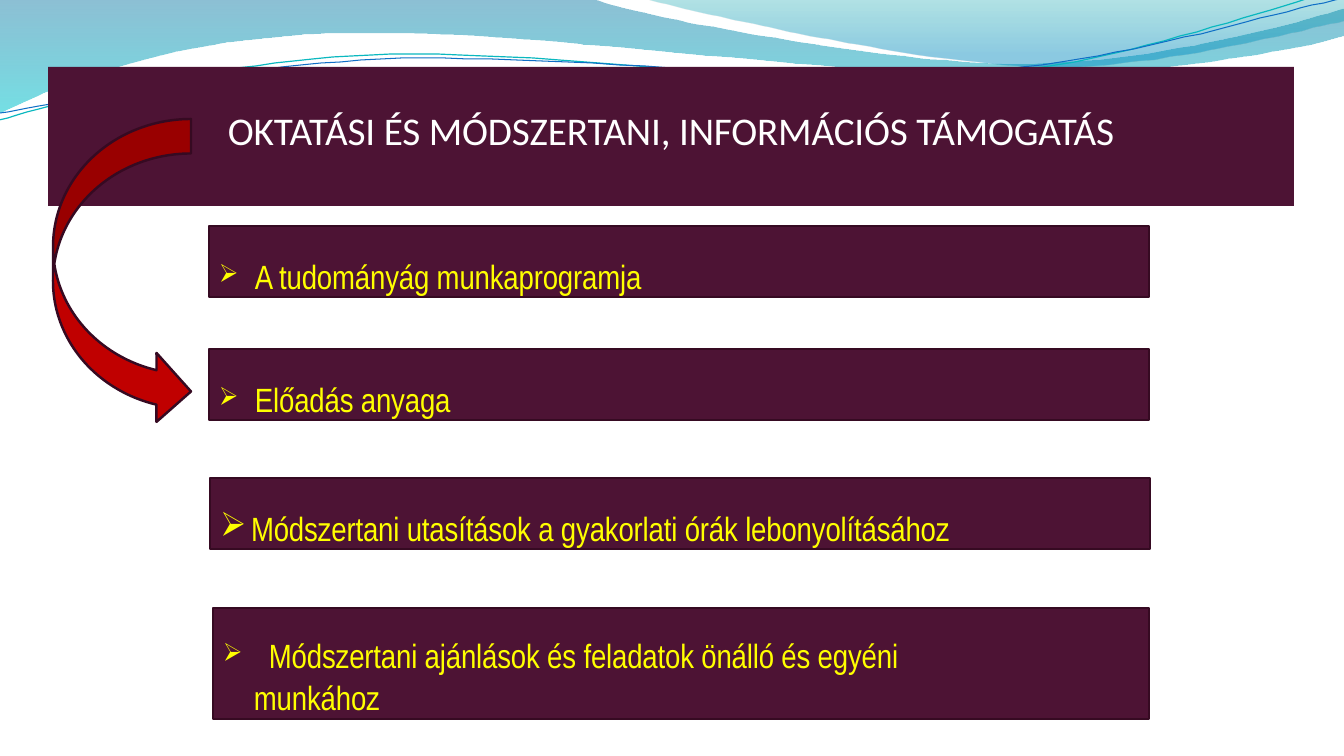
from dataclasses import dataclass

from lxml.etree import SubElement
from pptx import Presentation
from pptx.dml.color import RGBColor
from pptx.enum.shapes import MSO_SHAPE
from pptx.enum.text import MSO_ANCHOR, PP_ALIGN
from pptx.oxml.ns import qn
from pptx.util import Emu, Pt

TITLE = "OKTATÁSI ÉS MÓDSZERTANI, INFORMÁCIÓS TÁMOGATÁS"
TITLE_BOX = (48, 104, 1246, 49)
BANNER_BOX = (48, 67, 1246, 139)
ARROW_BOX = (53, 119, 138, 307)

TOPICS = [
    dict(text="A tudományág munkaprogramja", box=(209, 226, 940, 71),
         inset=30, before=21.4, margin=46, hang=36, bullet=75),
    dict(text="Előadás anyaga", box=(209, 349, 940, 71),
         inset=30, before=21.4, margin=46, hang=36, bullet=75),
    dict(text="Módszertani utasítások a gyakorlati órák lebonyolításához",
         box=(210, 478, 940, 71),
         inset=30, before=21.4, margin=41, hang=31, bullet=100),
    dict(text="\tMódszertani ajánlások és feladatok önálló és egyéni munkához",
         box=(213, 608, 936, 111), inset=26, before=19.1, margin=41, hang=31,
         bullet=75, tab=56, right=131, spacing=1.03),
]

# Each outline is a start point, then lines (x, y) and Bézier curves (six numbers).
# Gradient stops are (position, colour, opacity in percent).
WAVES = [
    dict(stops=[(0, "0074A1", 45), (1, "00C6CF", 55)], outline=[
        (-1, -1), (592, -1), (639, 17, 892, 64, 1019, 64),
        (1147, 64, 1288, 26, 1344, 9), (1346, 36),
        (1323, 44, 1169, 77, 1002, 76), (836, 76, 513, 28, 346, 34),
        (172, 36, 61, 84, -1, 114)]),
    dict(stops=[(0, "00A1A9", 30), (0.8, "008BBF", 45)], outline=[
        (644, -1), (684, 11, 916, 62, 1033, 66),
        (1149, 70, 1292, 32, 1344, 21), (1344, 0)]),
]
STRANDS = [
    dict(color="0AB8BF", width=0.85, outline=[
        (-1, 120), (65, 102, 213, 62, 372, 55),
        (531, 48, 796, 88, 958, 77), (1119, 67, 1262, 8, 1342, -10)]),
    dict(color="0F6FC6", width=0.75, outline=[
        (0, 113), (63, 104, 220, 67, 381, 59),
        (540, 53, 802, 83, 963, 73), (1124, 62, 1265, 14, 1345, -2)]),
]


@dataclass(frozen=True)
class Theme:
    plum: str = "4D1334"
    edge: str = "360A22"
    red: str = "C00000"
    white: str = "FFFFFF"
    yellow: str = "FFFF00"
    title_font: str = "Calibri"
    topic_font: str = "Arial Narrow"
    title_size: int = 28
    topic_size: int = 24
    edge_width: float = 1.75
    tracking: int = -10


THEME = Theme()
EMU_PER_PX = 914400 / 100.8
CURVE_STEPS = 24


def px(length):
    return Emu(round(length * EMU_PER_PX))


def rgb(color):
    return RGBColor.from_string(color)


def trace(outline):
    """Turn lines and Bézier curves into a list of points."""
    points = [outline[0]]
    for segment in outline[1:]:
        if len(segment) == 2:
            points.append(segment)
            continue
        x0, y0 = points[-1]
        x1, y1, x2, y2, x3, y3 = segment
        for step in range(1, CURVE_STEPS + 1):
            t = step / CURVE_STEPS
            a, b, c, d = (1 - t) ** 3, 3 * t * (1 - t) ** 2, 3 * t * t * (1 - t), t ** 3
            points.append((a * x0 + b * x1 + c * x2 + d * x3,
                           a * y0 + b * y1 + c * y2 + d * y3))
    return points


def add_outline(page, outline, close):
    points = trace(outline)
    builder = page.shapes.build_freeform(*points[0], scale=EMU_PER_PX)
    builder.add_line_segments(points[1:], close=close)
    shape = builder.convert_to_shape()
    shape.shadow.inherit = False
    return shape


def add_wave(page, stops, outline):
    wave = add_outline(page, outline, close=True)
    wave.line.fill.background()
    wave.fill.gradient()
    wave.fill.gradient_angle = 270
    for stop, (position, color, _) in zip(wave.fill.gradient_stops, stops):
        stop.position = position
        stop.color.rgb = rgb(color)
    colors = wave._element.spPr.iter(qn("a:srgbClr"))
    for node, (_, _, opacity) in zip(list(colors), stops):
        SubElement(node, qn("a:alpha"), val=str(opacity * 1000))


def add_strand(page, color, width, outline):
    strand = add_outline(page, outline, close=False)
    strand.fill.background()
    strand.line.color.rgb = rgb(color)
    strand.line.width = Pt(width)


def add_block(page, kind, box, fill, edge=None):
    shape = page.shapes.add_shape(kind, *map(px, box))
    shape.shadow.inherit = False
    shape.fill.solid()
    shape.fill.fore_color.rgb = rgb(fill)
    if edge:
        shape.line.color.rgb = rgb(edge)
        shape.line.width = Pt(THEME.edge_width)
    else:
        shape.line.fill.background()
    return shape


def set_frame(frame, anchor, top):
    frame.word_wrap = True
    frame.vertical_anchor = anchor
    frame.margin_left = frame.margin_right = frame.margin_bottom = 0
    frame.margin_top = px(top)


def style(para, font, size, color):
    for span in para.runs:
        span.font.name = font
        span.font.size = Pt(size)
        span.font.color.rgb = rgb(color)
        span._r.get_or_add_rPr().set("spc", str(THEME.tracking))


def add_bullet(para, margin, hang, size, tab, right):
    props = para._p.get_or_add_pPr()
    props.set("marL", str(px(margin)))
    props.set("marR", str(px(right)))
    props.set("indent", str(px(-hang)))
    color = SubElement(props, qn("a:buClr"))
    SubElement(color, qn("a:srgbClr"), val=THEME.yellow)
    SubElement(props, qn("a:buSzPct"), val=str(size * 1000))
    SubElement(props, qn("a:buChar"), char="➢")
    tabs = SubElement(props, qn("a:tabLst"))
    SubElement(tabs, qn("a:tab"), pos=str(px(tab)), algn="l")


def add_topic(page, text, box, inset, before, margin, hang, bullet,
              tab=None, right=0, spacing=1.0):
    block = add_block(page, MSO_SHAPE.RECTANGLE, box, THEME.plum, THEME.edge)
    set_frame(block.text_frame, MSO_ANCHOR.TOP, inset)
    para = block.text_frame.paragraphs[0]
    para.text = text
    para.alignment = PP_ALIGN.LEFT
    para.space_before = Pt(before)
    para.line_spacing = spacing
    add_bullet(para, margin, hang, bullet, tab or margin, right)
    style(para, THEME.topic_font, THEME.topic_size, THEME.yellow)


def add_title(page):
    banner = add_block(page, MSO_SHAPE.RECTANGLE, BANNER_BOX, THEME.plum)
    title = page.shapes.title
    banner._element.addnext(title._element)
    title.left, title.top, title.width, title.height = map(px, TITLE_BOX)
    set_frame(title.text_frame, MSO_ANCHOR.BOTTOM, 1)
    title.text_frame.text = TITLE
    para = title.text_frame.paragraphs[0]
    para.alignment = PP_ALIGN.CENTER
    style(para, THEME.title_font, THEME.title_size, THEME.white)


def main():
    deck = Presentation()
    deck.slide_width, deck.slide_height = px(1344), px(756)
    page = deck.slides.add_slide(deck.slide_layouts.get_by_name("Title Only"))
    for wave in WAVES:
        add_wave(page, **wave)
    for strand in STRANDS:
        add_strand(page, **strand)
    add_title(page)
    add_block(page, MSO_SHAPE.CURVED_RIGHT_ARROW, ARROW_BOX, THEME.red, THEME.edge)
    for topic in TOPICS:
        add_topic(page, **topic)
    deck.save("out.pptx")


if __name__ == "__main__":
    main()
